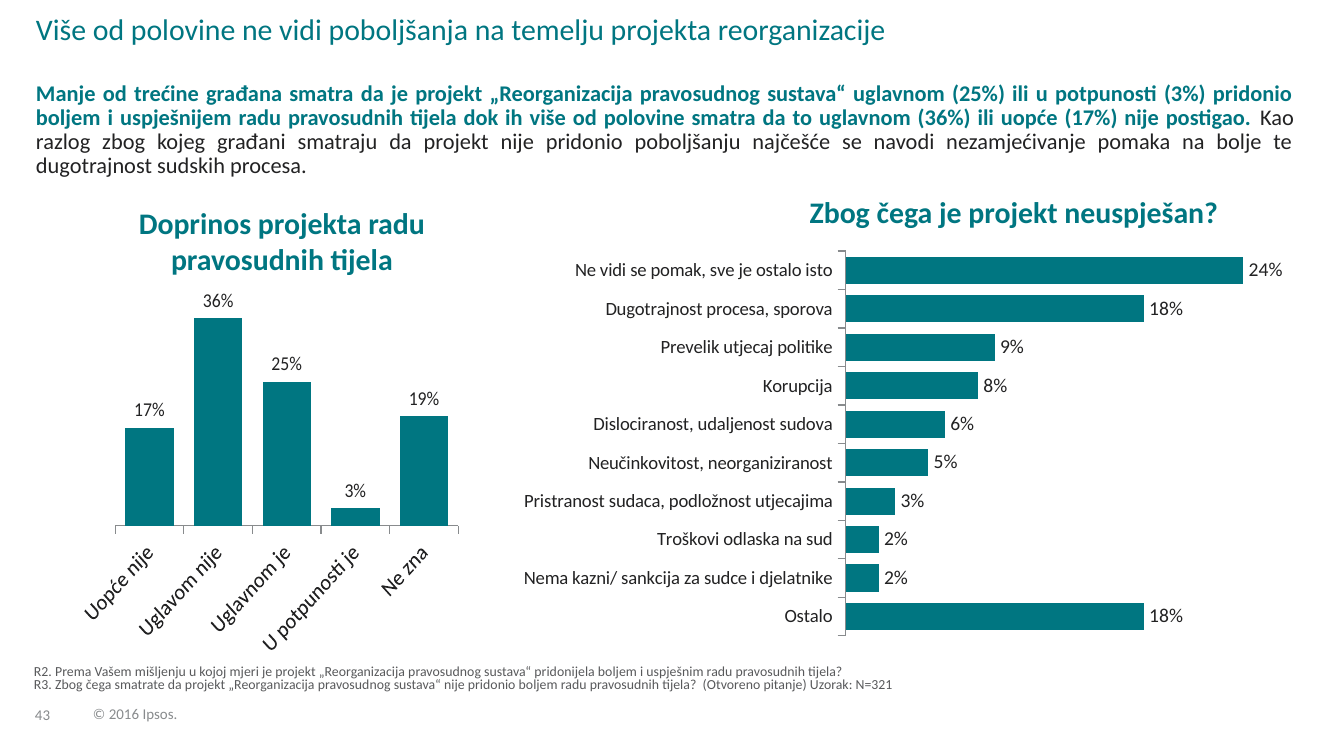
from lxml import etree
from pptx import Presentation, util as u
from pptx.chart.data import CategoryChartData
from pptx.dml.color import RGBColor
from pptx.enum import chart as ch, text
from pptx.oxml import parse_xml
from pptx.oxml.ns import nsdecls, qn

TEAL = RGBColor(0x00, 0x76, 0x81)
INK = RGBColor(0x22, 0x22, 0x23)
NOTE = RGBColor(0x58, 0x59, 0x5B)
GREY = RGBColor(0x88, 0x8B, 0x8D)
FONT = "Calibri"
PX = 914400 / 134.4
LEFT, CENTER, JUSTIFY = text.PP_ALIGN.LEFT, text.PP_ALIGN.CENTER, text.PP_ALIGN.JUSTIFY
TOP, BOTTOM = text.MSO_ANCHOR.TOP, text.MSO_ANCHOR.BOTTOM

# Content: each paragraph is a list of (text, colour, bold) runs
TITLE = [[("Više od polovine ne vidi poboljšanja na temelju projekta reorganizacije", TEAL, False)]]
SUMMARY = [[
    ("Manje od trećine građana smatra da je projekt „Reorganizacija pravosudnog sustava“ "
     "uglavnom (25%) ili u potpunosti (3%) pridonio boljem i uspješnijem radu pravosudnih "
     "tijela dok ih više od polovine smatra da to uglavnom (36%) ili uopće (17%) nije "
     "postigao. ", TEAL, True),
    ("Kao razlog zbog kojeg građani smatraju da projekt nije pridonio poboljšanju najčešće "
     "se navodi nezamjećivanje pomaka na bolje te dugotrajnost sudskih procesa.", INK, False),
]]
EFFECT_HEAD = [[("Doprinos projekta radu", TEAL, True)], [("pravosudnih tijela", TEAL, True)]]
REASON_HEAD = [[("Zbog čega je projekt neuspješan?", TEAL, True)]]
QUESTIONS = [
    [("R2. Prema Vašem mišljenju u kojoj mjeri je projekt „Reorganizacija pravosudnog sustava“ "
      "pridonijela boljem i uspješnim radu pravosudnih tijela?", NOTE, False)],
    [("R3. Zbog čega smatrate da projekt „Reorganizacija pravosudnog sustava“ nije pridonio "
      "boljem radu pravosudnih tijela?  (Otvoreno pitanje) Uzorak: N=321", NOTE, False)],
]
PAGE = [[("43", GREY, False)]]
COPYRIGHT = [[("© 2016 Ipsos.", GREY, False)]]

EFFECT = [("Uopće nije", 0.17), ("Uglavom nije", 0.36), ("Uglavnom je", 0.25),
          ("U potpunosti je", 0.03), ("Ne zna", 0.19)]
REASONS = [("Ne vidi se pomak, sve je ostalo isto", 0.24), ("Dugotrajnost procesa, sporova", 0.18),
           ("Prevelik utjecaj politike", 0.09), ("Korupcija", 0.08),
           ("Dislociranost, udaljenost sudova", 0.06), ("Neučinkovitost, neorganiziranost", 0.05),
           ("Pristranost sudaca, podložnost utjecajima", 0.03), ("Troškovi odlaska na sud", 0.02),
           ("Nema kazni/ sankcija za sudce i djelatnike", 0.02), ("Ostalo", 0.18)]

# Box in px, paragraphs, size, alignment, anchor, line spacing, insets (horizontal, vertical) in px
TEXTS = [
    ((36, 15, 1043, 32), TITLE, 16, LEFT, TOP, 0.9, (0, 0)),
    ((23, 75, 1284, 112), SUMMARY, 12, JUSTIFY, TOP, 0.9, (13, 7)),
    ((120, 198, 324, 86), EFFECT_HEAD, 16, CENTER, TOP, 1, (13, 7)),
    ((785, 198, 458, 34), REASON_HEAD, 16, CENTER, TOP, 0.9, (0, 0)),
    ((34, 665, 1066, 27), QUESTIONS, 7.4, LEFT, BOTTOM, 0.8, (0, 0)),
    ((35, 689, 46, 35), PAGE, 8, LEFT, BOTTOM, 0.85, (0, 0)),
    ((93, 699, 102, 24), COPYRIGHT, 8, LEFT, BOTTOM, 0.85, (0, 0)),
]
# Box in px, type, data, axis maximum, category size, label rotation, plot area (x, y, w, h)
CHARTS = [
    ((500, 235, 843, 405), ch.XL_CHART_TYPE.BAR_CLUSTERED, REASONS, 0.3, 10, None,
     (0.41, 0.04, 0.59, 0.95)),
    ((79, 280, 380, 384), ch.XL_CHART_TYPE.COLUMN_CLUSTERED, EFFECT, 0.4, 12, -45,
     (0, 0.04, 1, 0.6)),
]


def px(*values):
    return [u.Emu(round(v * PX)) for v in values]


def add_text(s, box, paragraphs, size, align, anchor, spacing, insets):
    tf = s.shapes.add_textbox(*px(*box)).text_frame
    tf.word_wrap = True
    tf.vertical_anchor = anchor
    tf.margin_left, tf.margin_top = px(*insets)
    tf.margin_right, tf.margin_bottom = px(*insets)
    for i, runs in enumerate(paragraphs):
        p = tf.add_paragraph() if i else tf.paragraphs[0]
        p.alignment, p.line_spacing = align, spacing
        for words, color, bold in runs:
            r = p.add_run()
            r.text = words
            r.font.name, r.font.size, r.font.bold = FONT, u.Pt(size), bold
            r.font.color.rgb = color


def add_chart(s, box, kind, rows, top, size, rotation, plot_area):
    data = CategoryChartData(number_format="0%")
    data.categories = [name for name, _ in rows]
    data.add_series("Series 1", [value for _, value in rows])
    chart = s.shapes.add_chart(kind, *px(*box), data).chart
    chart.has_legend = chart.has_title = False
    chart.font.name, chart.font.size = FONT, u.Pt(18)
    chart.font.color.rgb = INK

    # Bars and value labels
    plot = chart.plots[0]
    plot.gap_width, plot.vary_by_categories = 42, False
    fill = plot.series[0].format.fill
    fill.solid()
    fill.fore_color.rgb = TEAL
    plot.has_data_labels = True
    labels = plot.data_labels
    labels.show_value = True
    labels.number_format, labels.number_format_is_linked = "0%", False
    labels.position = ch.XL_LABEL_POSITION.OUTSIDE_END
    labels.font.name, labels.font.size = FONT, u.Pt(10.5)
    labels.font.color.rgb = INK

    # Axes
    values, cats = chart.value_axis, chart.category_axis
    values.minimum_scale, values.maximum_scale = 0, top
    values.has_major_gridlines = values.visible = False
    cats.reverse_order = kind == ch.XL_CHART_TYPE.BAR_CLUSTERED
    cats.major_tick_mark = ch.XL_TICK_MARK.OUTSIDE
    cats.format.line.color.rgb = GREY
    cats.tick_labels.font.name, cats.tick_labels.font.size = FONT, u.Pt(size)
    cats.tick_labels.font.color.rgb = INK
    area = chart.element.find(".//" + qn("c:plotArea"))
    if rotation:
        body = area.find(qn("c:catAx") + "/" + qn("c:txPr") + "/" + qn("a:bodyPr"))
        body.set("rot", str(rotation * 60000))

    # Fixed inner plot area
    old = area.find(qn("c:layout"))
    if old is not None:
        area.remove(old)
    layout = parse_xml(f"<c:layout {nsdecls('c')}><c:manualLayout/></c:layout>")
    settings = [("layoutTarget", "inner"), ("xMode", "edge"), ("yMode", "edge"),
                *zip("xywh", plot_area)]
    for tag, value in settings:
        etree.SubElement(layout[0], qn("c:" + tag)).set("val", str(value))
    area.insert(0, layout)


prs = Presentation()
prs.slide_width, prs.slide_height = px(1344, 756)
s = prs.slides.add_slide(prs.slide_layouts[6])
for item in CHARTS:
    add_chart(s, *item)
for item in TEXTS:
    add_text(s, *item)
prs.save("out.pptx")
